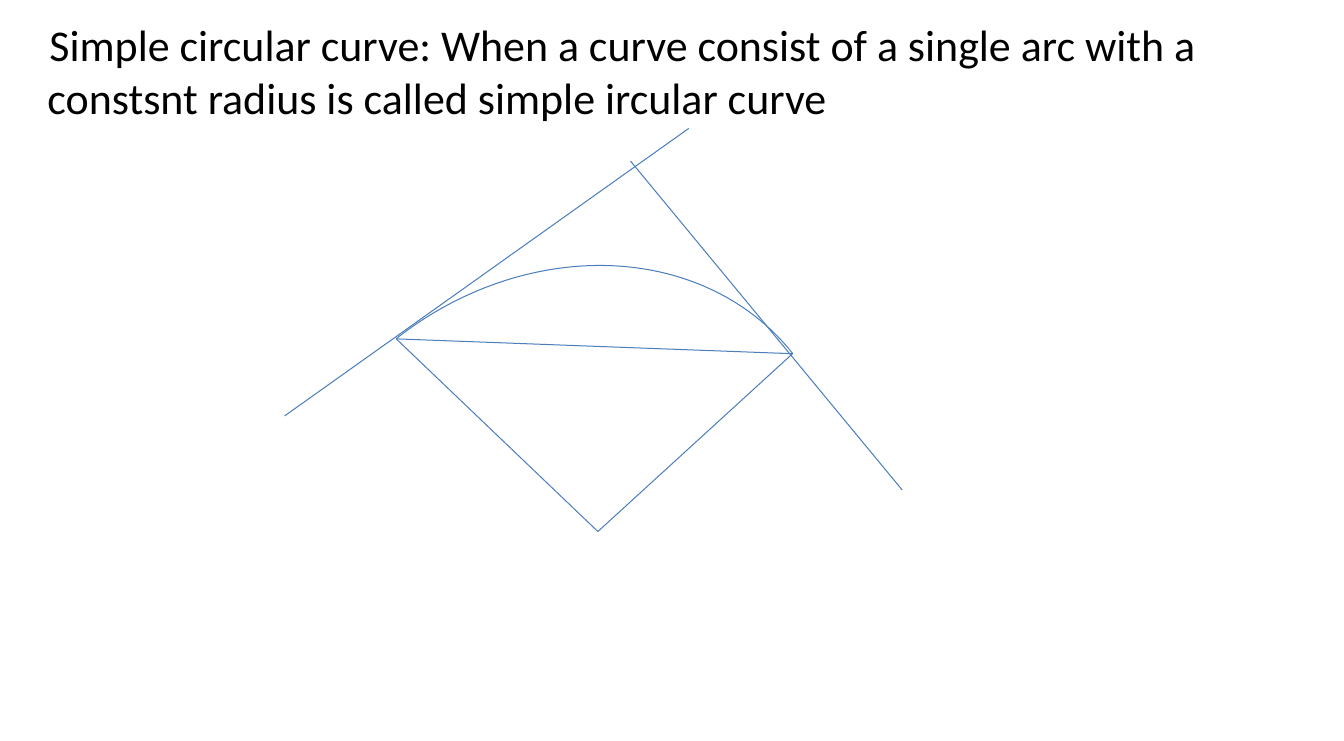
from lxml import etree
from pptx import Presentation
from pptx.dml.color import RGBColor
from pptx.enum.shapes import MSO_CONNECTOR, MSO_SHAPE
from pptx.oxml.ns import qn
from pptx.util import Inches, Pt

ARC = MSO_SHAPE.ARC
STRAIGHT = MSO_CONNECTOR.STRAIGHT
BLACK = RGBColor(0x00, 0x00, 0x00)
BLUE = RGBColor(0x4B, 0x7E, 0xBC)

SLIDE_WIDTH, SLIDE_HEIGHT = 13.6, 7.5
TEXT_TOP = 0.13
TITLE_AND_CONTENT = 1

CURVE_START = (4.01, 3.43)
CURVE_END = (8.02, 3.58)
CENTRE = (6.05, 5.38)
CURVE_LINES = (
    (CURVE_START, CENTRE),
    (CENTRE, CURVE_END),
    ((2.88, 4.21), (6.97, 1.3)),
    ((9.13, 4.96), (6.38, 1.63)),
    (CURVE_START, CURVE_END),
)
DEFINITION = (
    "Simple circular curve: When a curve consist of a single arc with a "
    "constsnt radius is called simple ircular curve"
)


class CurveSlide:
    text_format = {"name": "Calibri", "size": Pt(32), "bold": False}
    line_width = Pt(0.75)

    def __init__(self, presentation):
        layout = presentation.slide_layouts[TITLE_AND_CONTENT]
        self.slide = presentation.slides.add_slide(layout)
        title = self.slide.shapes.title.element
        title.getparent().remove(title)

    def style_line(self, shape):
        shape.line.color.rgb = BLUE
        shape.line.width = self.line_width

    def add_definition(self, text, left, top, width, height):
        """Fill the body placeholder with one unbulleted, indented paragraph."""
        body = self.slide.placeholders[1]
        box = {"left": left, "top": top, "width": width, "height": height}
        for name, value in box.items():
            setattr(body, name, Inches(value))
        paragraph = body.text_frame.paragraphs[0]
        run = paragraph.add_run()
        run.text = text
        for name, value in self.text_format.items():
            setattr(run.font, name, value)
        run.font.color.rgb = BLACK
        properties = paragraph._p.get_or_add_pPr()
        properties.set("marL", str(Inches(0.38)))
        properties.set("indent", str(Inches(0.02)))
        etree.SubElement(properties, qn("a:buNone"))

    def add_arc(self, left, top, width, height, rotation):
        arc = self.slide.shapes.add_shape(
            ARC, Inches(left), Inches(top), Inches(width), Inches(height)
        )
        arc.rotation = rotation
        arc.shadow.inherit = False
        arc.fill.background()
        self.style_line(arc)

    def add_line(self, start, end):
        ends = [Inches(value) for value in (*start, *end)]
        line = self.slide.shapes.add_connector(STRAIGHT, *ends)
        self.style_line(line)
        etree.SubElement(line._element.spPr, qn("a:effectLst"))


def main():
    presentation = Presentation()
    presentation.slide_width = Inches(SLIDE_WIDTH)
    presentation.slide_height = Inches(SLIDE_HEIGHT)

    curve_slide = CurveSlide(presentation)
    curve_slide.add_definition(
        DEFINITION, 0, TEXT_TOP, SLIDE_WIDTH, SLIDE_HEIGHT - TEXT_TOP
    )
    curve_slide.add_arc(2.56, 2.87, 6.12, 5.21, rotation=321.8)
    for start, end in CURVE_LINES:
        curve_slide.add_line(start, end)

    presentation.save("out.pptx")


if __name__ == "__main__":
    main()
